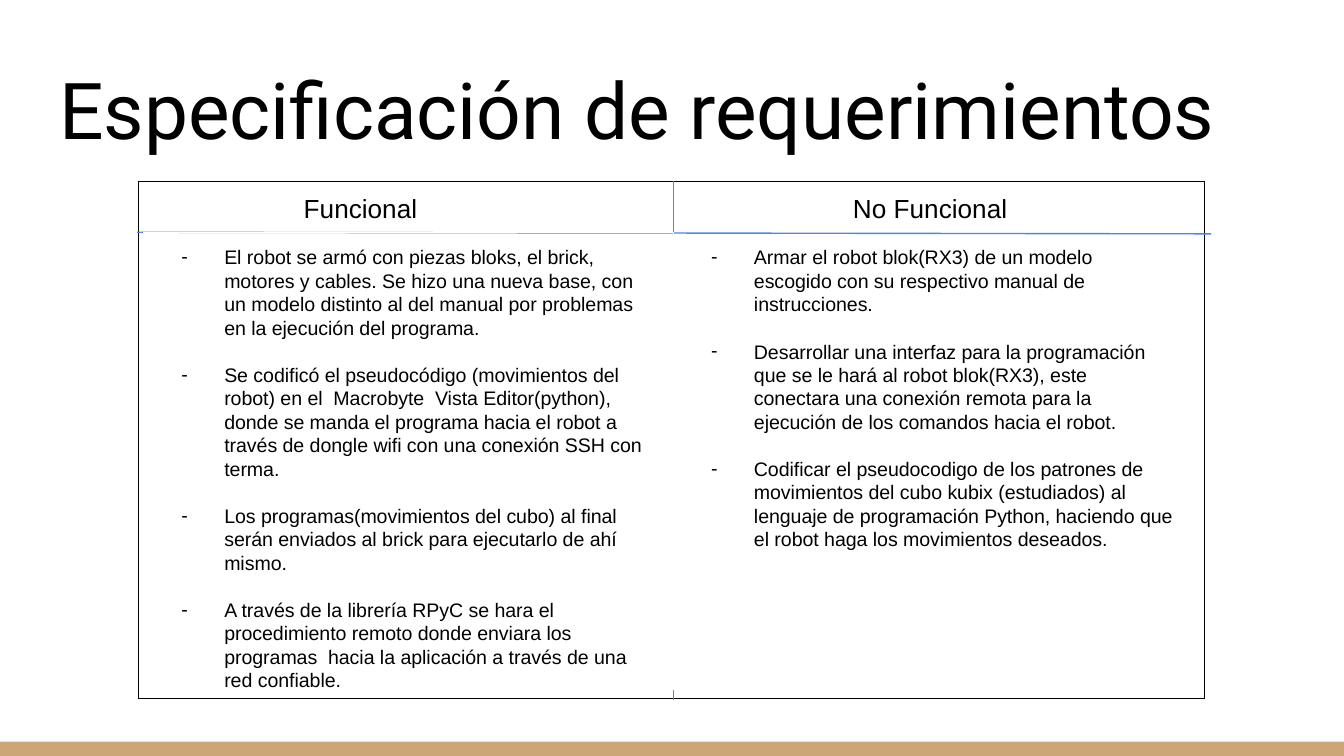
from dataclasses import dataclass

from lxml.etree import SubElement
from pptx import Presentation
from pptx.dml.color import RGBColor as RGB
from pptx.enum.shapes import MSO_CONNECTOR as CONN, MSO_SHAPE as SHAPE
from pptx.enum.text import MSO_ANCHOR as ANCHOR, PP_ALIGN as ALIGN
from pptx.oxml.ns import qn
from pptx.util import Cm, Pt


@dataclass(frozen=True)
class Theme:
    ink: RGB = RGB(0, 0, 0)
    paper: RGB = RGB(0xFF, 0xFF, 0xFF)
    band: RGB = RGB(0xCC, 0xA6, 0x77)
    rule: RGB = RGB(0x4A, 0x86, 0xE8)
    title_font: str = "Roboto"
    body_font: str = "Arial"
    title: float = 42
    heading: float = 14
    body: float = 10.5
    gap: float = 12.6
    line: float = 0.75


T = Theme()
INSET = Cm(0.25)
HEADINGS = (("Funcional", 2.87), ("No Funcional", 13.25))
FUNCTIONAL = (
    "El robot se armó con piezas bloks, el brick, motores y cables. Se hizo una nueva base, "
    "con un modelo distinto al del manual por problemas en la ejecución del programa.",
    "Se codificó el pseudocódigo (movimientos del robot) en el  Macrobyte  Vista Editor(python), "
    "donde se manda el programa hacia el robot a través de dongle wifi con una conexión SSH con terma.",
    "Los programas(movimientos del cubo) al final serán enviados al brick para ejecutarlo de ahí mismo.",
    "A través de la librería RPyC se hara el procedimiento remoto donde enviara los programas  "
    "hacia la aplicación a través de una red confiable.",
)
NON_FUNCTIONAL = (
    "Armar el robot blok(RX3) de un modelo escogido con su respectivo manual de instrucciones.",
    "Desarrollar una interfaz para la programación que se le hará al robot blok(RX3), este "
    "conectara una conexión remota para la ejecución de los comandos hacia el robot.",
    "Codificar el pseudocodigo de los patrones de movimientos del cubo kubix (estudiados) al "
    "lenguaje de programación Python, haciendo que el robot haga los movimientos deseados.",
)


def apply(obj, values):
    for name, value in values.items():
        setattr(obj, name, value)


def add_run(p, text, size, font):
    r = p.add_run()
    r.text = text
    apply(r.font, {"size": Pt(size), "name": font})
    r.font.color.rgb = T.ink


def set_frame(tf, anchor=ANCHOR.TOP, right=INSET):
    apply(tf, {"word_wrap": True, "vertical_anchor": anchor, "margin_left": INSET,
               "margin_right": right, "margin_top": INSET, "margin_bottom": INSET})


def add_rect(s, box, fill=None, line=None):
    sp = s.shapes.add_shape(SHAPE.RECTANGLE, *map(Cm, box))
    sp.shadow.inherit = False
    if fill is None:
        sp.fill.background()
    else:
        sp.fill.solid()
        sp.fill.fore_color.rgb = fill
    if line is None:
        sp.line.fill.background()
    else:
        sp.line.color.rgb = line
        sp.line.width = Pt(T.line)
    return sp


def add_title(s, text, box):
    tf = s.shapes.add_textbox(*map(Cm, box)).text_frame
    set_frame(tf, ANCHOR.BOTTOM)
    add_run(tf.paragraphs[0], text, T.title, T.title_font)


def add_rule(s, start, end):
    cn = s.shapes.add_connector(CONN.STRAIGHT, *map(Cm, start + end))
    cn.line.color.rgb = T.rule
    cn.line.width = Pt(T.line)
    SubElement(cn._element.spPr, qn("a:effectLst"))


def set_borders(cell):
    tc_pr = cell._tc.get_or_add_tcPr()
    for i, side in enumerate(("L", "R", "T", "B")):
        ln = tc_pr.makeelement(qn(f"a:ln{side}"), {"w": str(Pt(T.line))})
        fill = SubElement(ln, qn("a:solidFill"))
        SubElement(fill, qn("a:srgbClr"), val=str(T.ink))
        tc_pr.insert(i, ln)


def add_heading_table(s, headings, box):
    table = s.shapes.add_table(1, 1, *map(Cm, box)).table
    apply(table, {"first_row": False, "horz_banding": False})
    cell = table.cell(0, 0)
    apply(cell, {"margin_left": INSET, "margin_right": INSET,
                 "margin_top": INSET, "margin_bottom": INSET})
    cell.fill.background()
    set_borders(cell)
    p = cell.text_frame.paragraphs[0]
    tabs = SubElement(p._p.get_or_add_pPr(), qn("a:tabLst"))
    for text, pos in headings:
        SubElement(tabs, qn("a:tab"), pos=str(Cm(pos)), algn="l")
        add_run(p, "\t" + text, T.heading, T.body_font)


def add_dash(p):
    p_pr = p._p.get_or_add_pPr()
    p_pr.set("marL", str(Cm(1.27)))
    p_pr.set("indent", str(Cm(-0.81)))
    color = SubElement(p_pr, qn("a:buClr"))
    SubElement(color, qn("a:srgbClr"), val=str(T.ink))
    SubElement(p_pr, qn("a:buFont"), typeface=T.body_font)
    SubElement(p_pr, qn("a:buChar"), char="-")


def fill_list(tf, items, right=INSET):
    set_frame(tf, right=right)
    for i, text in enumerate(items):
        p = tf.add_paragraph() if i else tf.paragraphs[0]
        apply(p, {"alignment": ALIGN.LEFT, "line_spacing": 1.0,
                  "space_before": Pt(T.gap if i else 0)})
        add_dash(p)
        add_run(p, text, T.body, T.body_font)


def main():
    prs = Presentation()
    apply(prs, {"slide_width": Cm(25.4), "slide_height": Cm(14.29)})
    s = prs.slides.add_slide(prs.slide_layouts[6])
    add_rect(s, (0, 14.02, 25.4, 0.27), fill=T.band)
    add_title(s, "Especificación de requerimientos", (0.87, 0.87, 23.67, 2.31))
    add_heading_table(s, HEADINGS, (2.62, 3.43, 20.14, 9.78))
    add_rule(s, (2.59, 4.39), (22.89, 4.42))
    add_rule(s, (12.73, 3.43), (12.73, 13.23))
    left = add_rect(s, (2.72, 4.39, 10.01, 8.64), line=T.paper)
    fill_list(left.text_frame, FUNCTIONAL, right=Cm(0.5))
    right = s.shapes.add_textbox(*map(Cm, (12.73, 4.39, 9.73, 7.57)))
    fill_list(right.text_frame, NON_FUNCTIONAL)
    prs.save("out.pptx")


if __name__ == "__main__":
    main()
